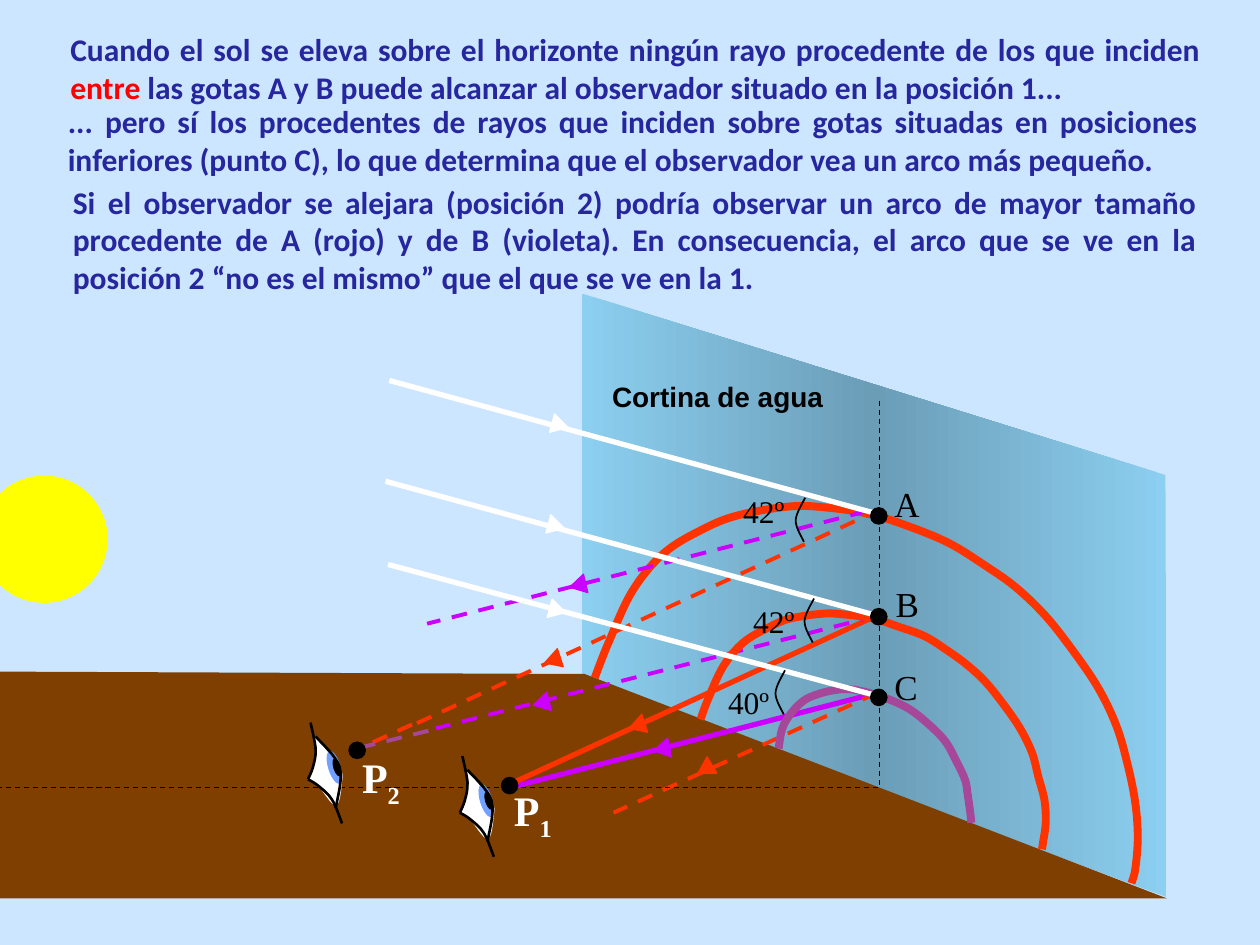
from copy import deepcopy

from pptx import Presentation
from pptx.dml.color import RGBColor
from pptx.enum.dml import MSO_LINE
from pptx.enum.shapes import MSO_CONNECTOR, MSO_SHAPE
from pptx.enum.text import PP_ALIGN
from pptx.oxml.ns import qn
from pptx.util import Emu, Inches, Pt

DASH = MSO_LINE.DASH
STRAIGHT = MSO_CONNECTOR.STRAIGHT
OVAL, TRIANGLE = MSO_SHAPE.OVAL, MSO_SHAPE.ISOSCELES_TRIANGLE
LEFT, JUSTIFY = PP_ALIGN.LEFT, PP_ALIGN.JUSTIFY

SKY = RGBColor(0xCD, 0xE6, 0xFF)
WATER = RGBColor(0x8C, 0xCF, 0xF0)
DEEP_WATER = RGBColor(0x6B, 0x9D, 0xB7)
EARTH = RGBColor(0x7E, 0x3F, 0x00)
RED = RGBColor(0xFF, 0x33, 0x00)
VIOLET = RGBColor(0xCC, 0x00, 0xFF)
PLUM = RGBColor(0xA7, 0x47, 0x99)
IRIS = RGBColor(0x71, 0xA0, 0xFF)
YELLOW = RGBColor(0xFF, 0xFF, 0x00)
NAVY = RGBColor(0x26, 0x26, 0x9E)
ACCENT = RGBColor(0xFF, 0x00, 0x00)
BLACK = RGBColor(0, 0, 0)
WHITE = RGBColor(0xFF, 0xFF, 0xFF)

BIG_ARC = [(47.2, 53.8), (48.3, 51), (50.2, 46.9), (52.7, 43.9), (55.8, 42),
           (58.6, 40.9), (62.7, 40.2), (65.7, 40.3), (69, 40.8), (71.9, 41.7),
           (75.3, 43.1), (78.2, 44.9), (80.6, 46.6), (82.9, 48.8), (84.9, 51.3),
           (87.1, 54.5), (88.6, 57.6), (89.5, 60.7), (90.1, 63.7), (90.3, 66.5),
           (90.1, 69), (89.8, 70.1)]
MIDDLE_ARC = [(55.6, 57.1), (56.2, 55.5), (57.4, 52.9), (59, 51), (61, 49.8),
              (62.7, 49.1), (65.4, 48.7), (67.3, 48.8), (69.4, 49.1), (71.2, 49.7),
              (73.4, 50.5), (75.3, 51.7), (76.8, 52.8), (78.2, 54.1), (79.5, 55.7),
              (80.9, 57.7), (81.9, 59.7), (82.4, 61.6), (82.9, 63.5), (83, 65.3),
              (82.8, 66.8), (82.7, 67.4)]
SMALL_ARC = [(61.8, 59.4), (62.1, 57.8), (62.8, 56.6), (63.8, 55.6), (64.9, 55.1),
             (66.1, 54.8), (67.4, 54.7), (69, 55), (70.8, 55.6), (72.2, 56.3),
             (73.5, 57.3), (75, 58.8), (75.9, 60.4), (76.6, 61.9), (76.8, 63),
             (77, 64.4), (77.1, 65.3)]
ANGLE_ARC = [(0, 0), (-0.65, -1.7), (0.1, -3.5)]
EYE_WHITE = [(37.1, 61.2), (39, 63.6), (39.2, 64.7), (38.7, 66.6), (37.2, 64.9),
             (36.5, 64.5), (36.9, 63.5), (37.2, 62.2)]
EYE_LINES = [[(36.7, 60), (37.1, 62.1), (36.9, 63.5), (36.5, 64.5)],
             [(37.1, 61.1), (39.02, 63.58), (38.7, 66.8)],
             [(39.2, 68), (38.4, 66.1), (37.3, 65), (36.5, 64.5)]]

RAYS = [
    ((40.9, 62.4), (69.6, 55), VIOLET, 3, None, (52.5, 59.45, 259)),
    ((69.6, 55), (48.7, 64.5), RED, 2.25, DASH, (55.95, 61.05, 239)),
    ((39.9, 62.5), (69.7, 48.8), RED, 3, None, (50.55, 57.6, 252)),
    ((69.5, 48.9), (34.6, 57.8), VIOLET, 2.25, DASH, (42.95, 55.8, 256.5)),
    ((33.1, 57.4), (69.5, 40.6), RED, 2.25, DASH, (43.85, 52.4, 252)),
    ((68.7, 40.6), (33.9, 49.5), VIOLET, 2.25, DASH, (45.85, 46.45, 256.5)),
    ((32.7, 57.5), (28.3, 59.5), RED, 2.25, DASH, None),
    ((34, 58), (28.3, 59.4), PLUM, 2.25, DASH, None),
]
SUN_RAYS = [
    ((30.9, 30.2), (69.7, 40.8), WHITE, 3, None, (44.45, 33.75, 105.1)),
    ((30.8, 44.8), (69.9, 55.3), WHITE, 3, None, (44.25, 48.45, 105.1)),
    ((30.6, 38.2), (69.4, 48.8), WHITE, 3, None, (44.15, 41.75, 105.1)),
]
ANGLES = [("40º", 56.8, 53.7, (62.2, 56.7)), ("42º", 58, 38.6, (63.8, 43)),
          ("42º", 58.8, 47.3, (64.5, 51))]
DROPS = [("A", 70, 37.8), ("B", 70.1, 45.7), ("C", 70, 52.3)]
DOTS = [(69.75, 40.95), (69.75, 48.95), (69.75, 55.35), (40.45, 62.35), (28.35, 59.55)]
PARAGRAPHS = [
    (4.6, 1.9, 91.7, 7.1, [
        ("Cuando el sol se eleva sobre el horizonte ningún rayo procedente de los que inciden ", NAVY),
        ("entre", ACCENT),
        (" las gotas A y B puede alcanzar al observador situado en la posición 1...", NAVY)]),
    (4.4, 7.6, 91.7, 7.1, [
        ("... pero sí los procedentes de rayos que inciden sobre gotas situadas en posiciones "
         "inferiores (punto C), lo que determina que el observador vea un arco más pequeño.", NAVY)]),
    (4.8, 14, 91.2, 10.1, [
        ("Si el observador se alejara (posición 2) podría observar un arco de mayor tamaño "
         "procedente de A (rojo) y de B (violeta). En consecuencia, el arco que se ve en la "
         "posición 2 “no es el mismo” que el que se ve en la 1.", NAVY)]),
]


class Scene:
    """Draws on one slide over a grid of 100 columns by 75 rows."""

    def __init__(self, prs):
        self.slide = prs.slides.add_slide(prs.slide_layouts[6])
        self.shapes = self.slide.shapes
        self.cell = prs.slide_width / 100
        self.slide.background.fill.solid()
        self.slide.background.fill.fore_color.rgb = SKY

    def grid(self, *cells):
        return [Emu(round(c * self.cell)) for c in cells]

    def paint(self, sp, fill=None, line=None, width=0.75, dash=None):
        sp.shadow.inherit = False
        for part, color in ((sp.fill, fill), (sp.line.fill, line)):
            if color is None:
                part.background()
            else:
                part.solid()
                part.fore_color.rgb = color
        if line is not None:
            sp.line.width = Pt(width)
            sp.line.dash_style = dash
        return sp

    def polygon(self, points, close=True, **style):
        first, *rest = [self.grid(*pt) for pt in points]
        fb = self.shapes.build_freeform(*first, scale=1.0)
        fb.add_line_segments(rest, close=close)
        return self.paint(fb.convert_to_shape(), **style)

    def curve(self, knots, dx=0, dy=0, close=False, **style):
        pts = [(x + dx, y + dy) for x, y in knots]
        ends = (pts[-1], pts[0], pts[1]) if close else (pts[0], pts[-1])
        ring = [ends[0], *pts, *ends[1:]]
        path = [pts[0]]
        for a, b, c, d in zip(ring, ring[1:], ring[2:], ring[3:]):
            path.append([q + (r - p) / 6 for p, q, r in zip(a, b, c)])
            path.append([r - (t - q) / 6 for q, r, t in zip(b, c, d)])
            path.append(c)
        sp = self.polygon(path, close, **style)
        steps = list(sp._element.iter(qn("a:lnTo")))
        for first, second, third in zip(steps[::3], steps[1::3], steps[2::3]):
            first.tag = qn("a:cubicBezTo")
            for step in (second, third):
                first.append(step[0])
                step.getparent().remove(step)
        return sp

    def preset(self, kind, x, y, w, h, rotation=0, **style):
        sp = self.shapes.add_shape(kind, *self.grid(x - w / 2, y - h / 2, w, h))
        sp.rotation = rotation
        return self.paint(sp, **style)

    def ray(self, start, end, color, width, dash, arrow):
        cn = self.shapes.add_connector(STRAIGHT, *self.grid(*start, *end))
        cn.line.color.rgb = color
        cn.line.width = Pt(width)
        cn.line.dash_style = dash
        cn._element.spPr.add_effectLst() if hasattr(cn._element.spPr, "add_effectLst") else \
            cn._element.spPr.append(cn._element.spPr.makeelement(qn("a:effectLst"), {}))
        if arrow:
            x, y, angle = arrow
            self.preset(TRIANGLE, x, y, 1.5, 1.3, angle, fill=color, line=color)

    def text(self, x, y, w, h, runs, size, font="Times New Roman", bold=False, align=LEFT):
        tf = self.shapes.add_textbox(*self.grid(x, y, w, h)).text_frame
        tf.word_wrap = True
        p = tf.paragraphs[0]
        p.alignment = align
        for content, color in runs:
            r = p.add_run()
            r.text = content
            r.font.size, r.font.name, r.font.bold = Pt(size), font, bold
            r.font.color.rgb = color
        return p

    def curtain(self, points):
        sp = self.polygon(points)
        sp.fill.gradient()
        sp.fill.gradient_angle = 0
        first = sp._element.find(".//" + qn("a:gs"))
        first.addnext(deepcopy(first))
        for stop, place, color in zip(sp.fill.gradient_stops, (0, 0.5, 1),
                                      (WATER, DEEP_WATER, WATER)):
            stop.position = place
            stop.color.rgb = color

    def observer(self, number, dx=0, dy=0):
        self.curve(EYE_WHITE, dx, dy, close=True, fill=WHITE)
        p = self.text(39.8 + dx, 61.8 + dy, 6.9, 5.1, [("P", WHITE), (number, WHITE)], 24, bold=True)
        p.runs[1].font._element.set("baseline", "-25000")
        for x, y, w, h, color in ((38.6, 63.55, 1, 2.7, IRIS), (38.8, 63.55, 0.6, 1.5, BLACK)):
            self.preset(OVAL, x + dx, y + dy, w, h, 342.9, fill=color)
        for knots in EYE_LINES:
            self.curve(knots, dx, dy, line=BLACK, width=1.5)


def main():
    prs = Presentation()
    prs.slide_width, prs.slide_height = Inches(10), Inches(7.5)
    s = Scene(prs)
    s.curtain([(46.2, 53.6), (46.2, 23.3), (92.5, 37.7), (92.6, 71.2)])
    s.curve(BIG_ARC, line=RED, width=4.5)
    s.polygon([(46.4, 53.5), (-1.6, 53.3), (-1, 71.3), (92.6, 71.3)], fill=EARTH)
    for ray in RAYS:
        s.ray(*ray)
    s.preset(OVAL, 3.5, 42.8, 10, 10, fill=YELLOW, line=YELLOW)
    s.curve(MIDDLE_ARC, line=RED, width=4.5)
    s.curve(SMALL_ARC, line=PLUM, width=4.5)
    for ray in SUN_RAYS:
        s.ray(*ray)
    for label, x, y, corner in ANGLES:
        s.curve(ANGLE_ARC, *corner, line=BLACK, width=1)
        s.text(x, y, 6.4, 4, [(label, BLACK)], 18)
    for label, x, y in DROPS:
        s.text(x, y, 5.5, 4.3, [(label, BLACK)], 20)
    for *box, runs in PARAGRAPHS:
        s.text(*box, runs, 18, "Calibri", True, JUSTIFY)
    s.polygon([(69.8, 31.8), (69.8, 62.5), (-0.9, 62.5)], close=False, line=BLACK, dash=DASH)
    s.observer("1")
    s.observer("2", -12.05, -2.65)
    s.text(47.6, 29.6, 20.4, 3.7, [("Cortina de agua", BLACK)], 16, "Arial", True)
    for x, y in DOTS:
        s.preset(OVAL, x, y, 1.3, 1.3, fill=BLACK, line=BLACK)
    prs.save("out.pptx")


if __name__ == "__main__":
    main()
